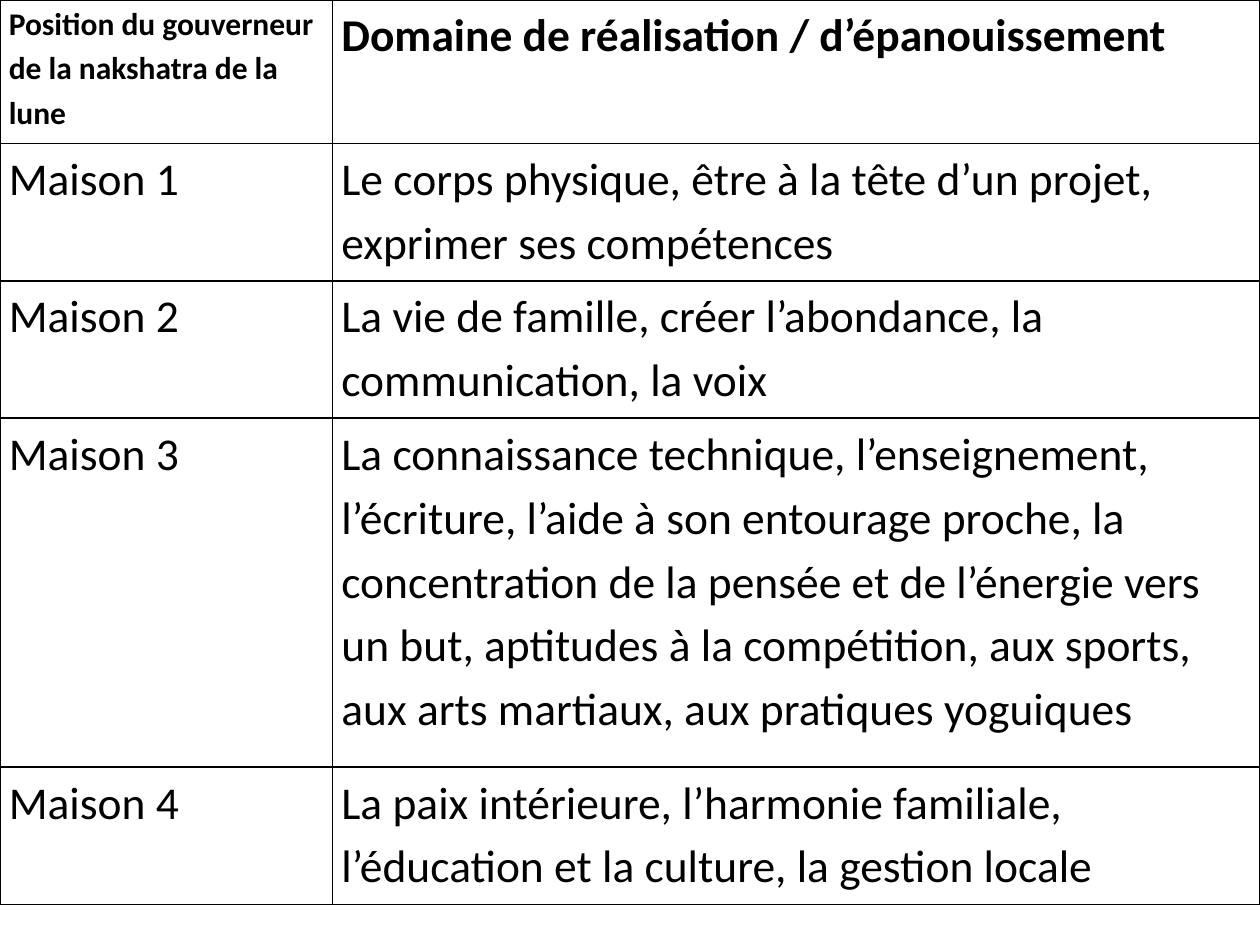
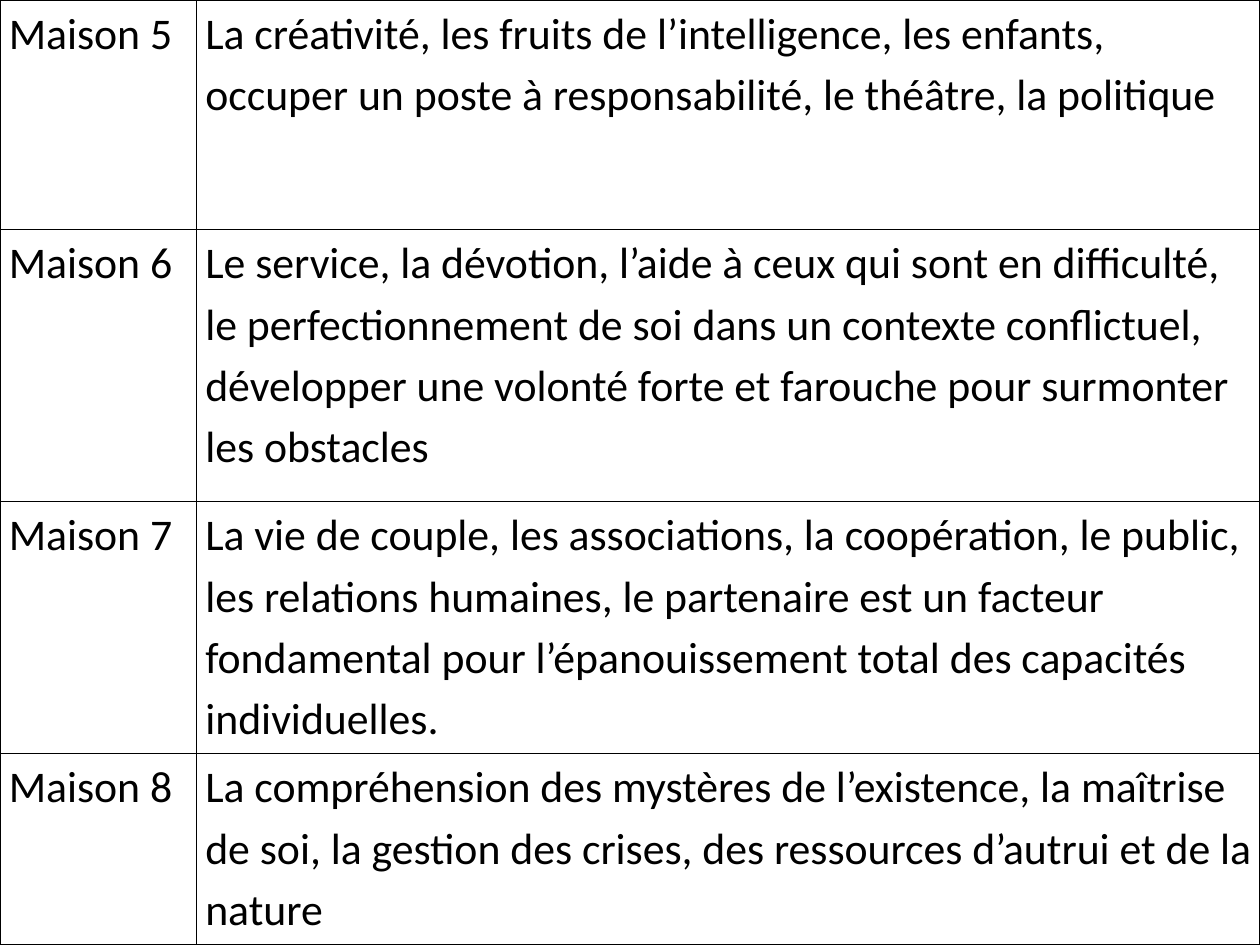
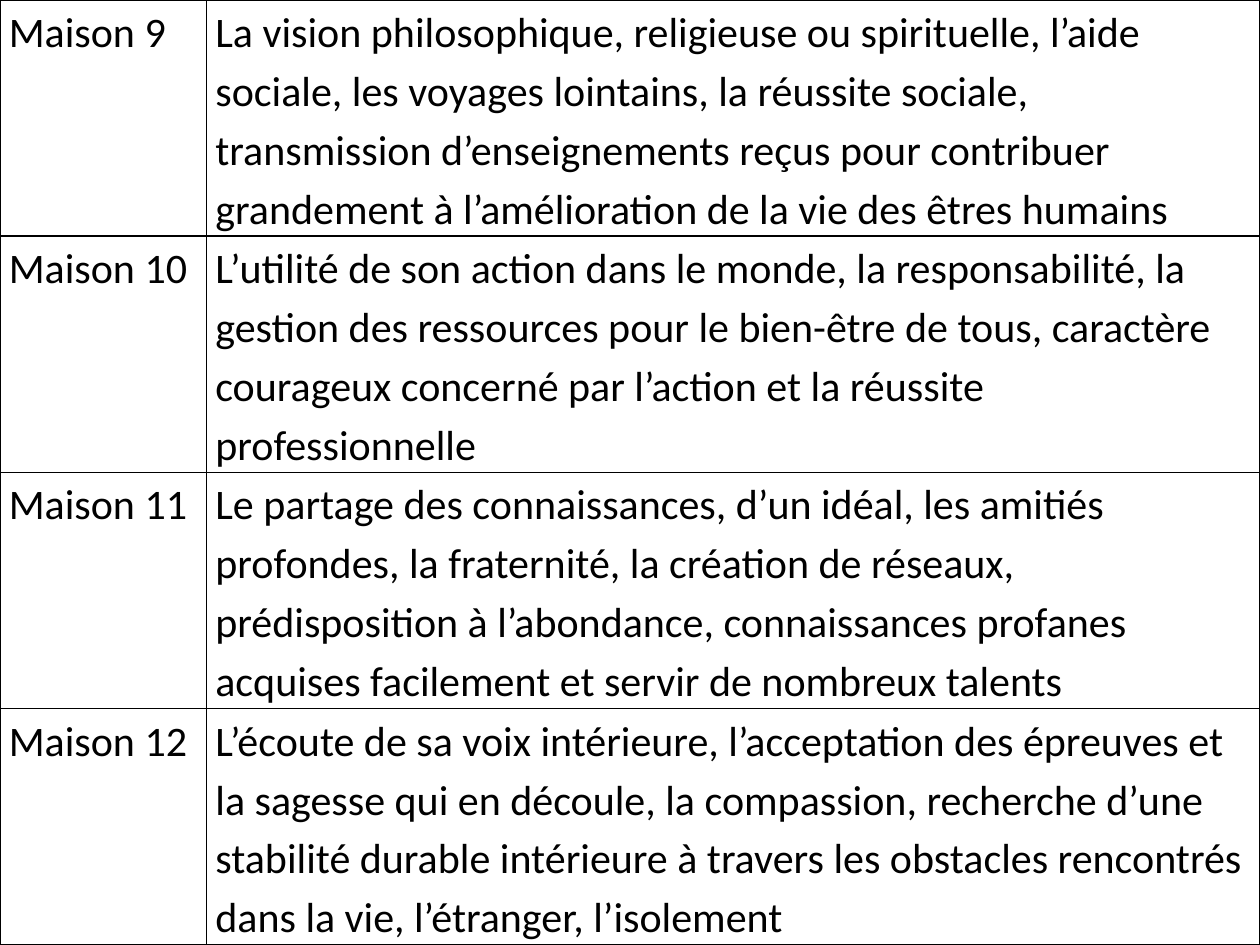
"""Build three slides of tables on the twelve houses and their domains of fulfilment."""
from dataclasses import dataclass

from lxml import etree
from pptx import Presentation
from pptx import util as u
from pptx.dml.color import RGBColor
from pptx.oxml import ns

COLORS = {"ink": "000000", "paper": "FFFFFF"}
FONT = "Calibri"
SLIDE_W, SLIDE_H = 10, 7.5
SIDE_MARGIN = u.Inches(0.07)
BORDER = u.Pt(1)
HEADER_SIZES = (18, 26)


@dataclass(frozen=True)
class HouseTable:
    first_house: int
    label_width: float
    size: int
    heights: tuple[float, ...]
    domains: tuple[str, ...]
    header: tuple[str, ...] = ()


TABLES = (
    HouseTable(
        1, 2.64, 26, (1.14, 1.09, 1.09, 2.77, 1.09),
        (
            "Le corps physique, être à la tête d’un projet, exprimer ses compétences",
            "La vie de famille, créer l’abondance, la communication, la voix",
            "La connaissance technique, l’enseignement, l’écriture, l’aide à son "
            "entourage proche, la concentration de la pensée et de l’énergie vers un "
            "but, aptitudes à la compétition, aux sports, aux arts martiaux, aux "
            "pratiques yoguiques",
            "La paix intérieure, l’harmonie familiale, l’éducation et la culture, la "
            "gestion locale",
        ),
        ("Position du gouverneur de la nakshatra de la lune",
         "Domaine de réalisation / d’épanouissement"),
    ),
    HouseTable(
        5, 1.56, 25, (1.82, 2.16, 2, 1.52),
        (
            "La créativité, les fruits de l’intelligence, les enfants, occuper un "
            "poste à responsabilité, le théâtre, la politique",
            "Le service, la dévotion, l’aide à ceux qui sont en difficulté, le "
            "perfectionnement de soi dans un contexte conflictuel, développer une "
            "volonté forte et farouche pour surmonter les obstacles",
            "La vie de couple, les associations, la coopération, le public, les "
            "relations humaines, le partenaire est un facteur fondamental pour "
            "l’épanouissement total des capacités individuelles.",
            "La compréhension des mystères de l’existence, la maîtrise de soi, la "
            "gestion des crises, des ressources d’autrui et de la nature",
        ),
    ),
    HouseTable(
        9, 1.64, 24, (SLIDE_H / 4,) * 4,
        (
            "La vision philosophique, religieuse ou spirituelle, l’aide sociale, les "
            "voyages lointains, la réussite sociale, transmission d’enseignements "
            "reçus pour contribuer grandement à l’amélioration de la vie des êtres "
            "humains",
            "L’utilité de son action dans le monde, la responsabilité, la gestion des "
            "ressources pour le bien-être de tous, caractère courageux concerné par "
            "l’action et la réussite professionnelle",
            "Le partage des connaissances, d’un idéal, les amitiés profondes, la "
            "fraternité, la création de réseaux, prédisposition à l’abondance, "
            "connaissances profanes acquises facilement et servir de nombreux talents",
            "L’écoute de sa voix intérieure, l’acceptation des épreuves et la sagesse "
            "qui en découle, la compassion, recherche d’une stabilité durable "
            "intérieure à travers les obstacles rencontrés dans la vie, l’étranger, "
            "l’isolement",
        ),
    ),
)


def add_borders(cell) -> None:
    tc_pr = cell._tc.get_or_add_tcPr()
    for side in ("lnL", "lnR", "lnT", "lnB"):
        line = etree.SubElement(tc_pr, ns.qn(f"a:{side}"), w=str(BORDER))
        fill = etree.SubElement(line, ns.qn("a:solidFill"))
        etree.SubElement(fill, ns.qn("a:srgbClr"), val=COLORS["ink"])


def fill_cell(cell, content: str, size: int, bold: bool) -> None:
    add_borders(cell)
    cell.fill.solid()
    cell.fill.fore_color.rgb = RGBColor.from_string(COLORS["paper"])
    cell.margin_left = cell.margin_right = SIDE_MARGIN
    cell.margin_top = cell.margin_bottom = 0
    p = cell.text_frame.paragraphs[0]
    p.text = content
    p.line_spacing = 1.15
    p.space_after = u.Pt(10)
    r = p.runs[0]
    r.font.name = FONT
    r.font.size = u.Pt(size)
    r.font.bold = bold
    r.font.color.rgb = RGBColor.from_string(COLORS["ink"])


def add_house_table(s, data: HouseTable) -> None:
    rows = [(f"Maison {n}", domain)
            for n, domain in enumerate(data.domains, data.first_house)]
    if data.header:
        rows.insert(0, data.header)
    table = s.shapes.add_table(
        len(rows), 2, 0, 0, u.Inches(SLIDE_W), u.Inches(sum(data.heights))).table
    table.first_row = table.horz_banding = False
    table.columns[0].width = u.Inches(data.label_width)
    table.columns[1].width = u.Inches(SLIDE_W - data.label_width)
    for i, (row, height) in enumerate(zip(rows, data.heights)):
        table.rows[i].height = u.Inches(height)
        is_header = row is data.header
        sizes = HEADER_SIZES if is_header else (data.size, data.size)
        for j, (content, size) in enumerate(zip(row, sizes)):
            fill_cell(table.cell(i, j), content, size, is_header)


def main() -> None:
    prs = Presentation()
    prs.slide_width = u.Inches(SLIDE_W)
    prs.slide_height = u.Inches(SLIDE_H)
    for data in TABLES:
        add_house_table(prs.slides.add_slide(prs.slide_layouts[6]), data)
    prs.save("out.pptx")


if __name__ == "__main__":
    main()
